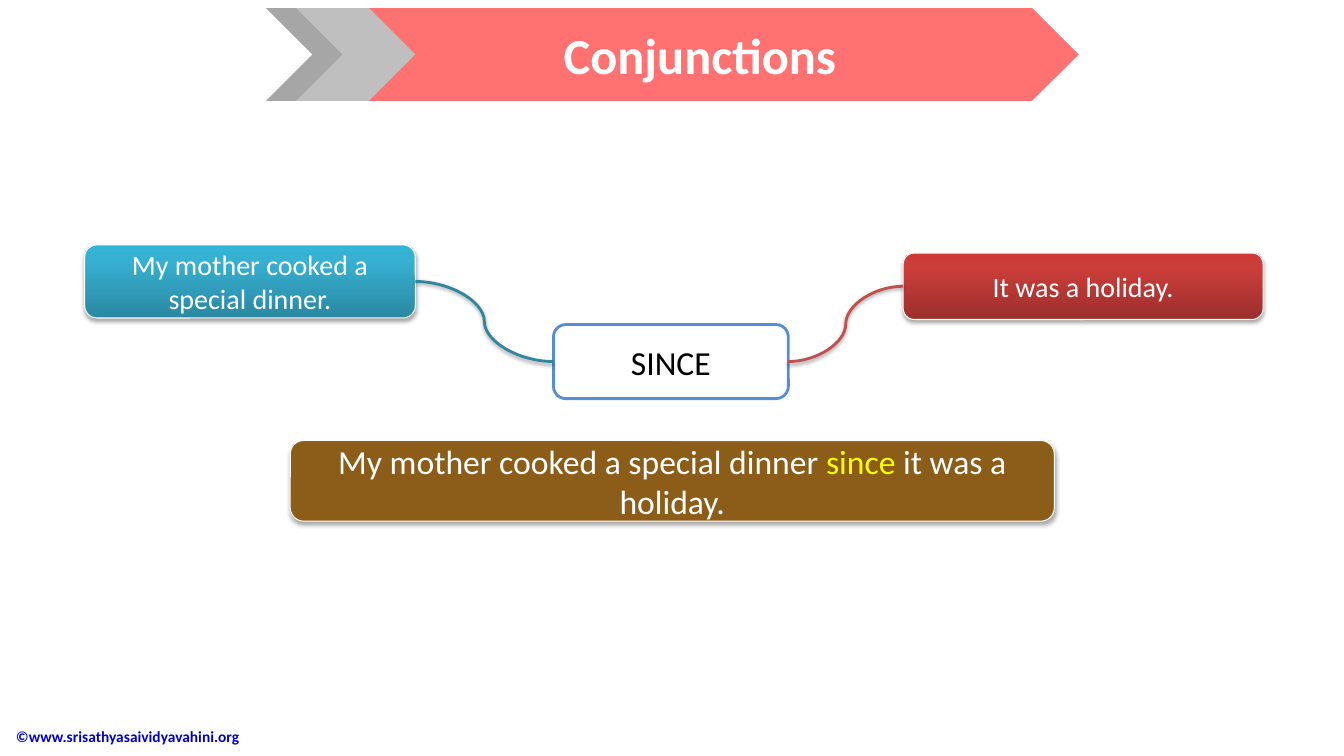
import copy
import pptx
import pptx.dml.color
import pptx.enum.dml
import pptx.enum.shapes
import pptx.enum.text
import pptx.oxml
import pptx.oxml.ns
import pptx.util

SHAPES = pptx.enum.shapes.MSO_SHAPE
ALIGN = pptx.enum.text.PP_ALIGN
WHITE = "FFFFFF"
TEAL_FADE = ("2A88A2", "37B1D2", "34B4D6")
RED_FADE = ("9C2F2D", "CB3E3A", "CE3B37")
LEFT_SIDE, RIGHT_SIDE = 1, 3

deck = pptx.Presentation()
deck.slide_width = pptx.util.Inches(13.33)
deck.slide_height = pptx.util.Inches(7.5)
COLUMN = deck.slide_width / 100
ROW = deck.slide_height / 100


def emu(box):
    left, top, width, height = box
    return [round(left * COLUMN), round(top * ROW), round(width * COLUMN), round(height * ROW)]


def color(value):
    return pptx.dml.color.RGBColor.from_string(value)


def write(holder, text, size=20, ink=WHITE, bold=False, align=ALIGN.CENTER, accent=None, accent_ink=None):
    frame = holder.text_frame
    frame.word_wrap = True
    frame.auto_size = pptx.enum.text.MSO_AUTO_SIZE.NONE
    frame.vertical_anchor = pptx.enum.text.MSO_ANCHOR.MIDDLE
    paragraph = frame.paragraphs[0]
    paragraph.alignment = align
    before, match, after = text.partition(accent) if accent else (text, "", "")
    for part, part_ink in ((before, ink), (match, accent_ink), (after, ink)):
        if part:
            run = paragraph.add_run()
            run.text = part
            run.font.name = "Calibri"
            run.font.size = pptx.util.Pt(size)
            run.font.bold = bold
            run.font.color.rgb = color(part_ink)


def cast_shadow(part, distance, opacity):
    properties = part._element.spPr
    effects = properties.find(pptx.oxml.ns.qn("a:effectLst"))
    if effects is None:
        effects = pptx.oxml.parse_xml(f'<a:effectLst {pptx.oxml.ns.nsdecls("a")}/>')
        properties.append(effects)
    effects.append(pptx.oxml.parse_xml(
        f'<a:outerShdw {pptx.oxml.ns.nsdecls("a")} blurRad="{pptx.util.Pt(3.1)}" '
        f'dist="{pptx.util.Pt(distance)}" dir="5400000" rotWithShape="0">'
        f'<a:srgbClr val="000000"><a:alpha val="{opacity * 1000}"/></a:srgbClr></a:outerShdw>'))


def add_panel(slide, kind, box, fill, border=None, border_width=0.75):
    panel = slide.shapes.add_shape(kind, *emu(box))
    panel.shadow.inherit = False
    if isinstance(fill, str):
        panel.fill.solid()
        panel.fill.fore_color.rgb = color(fill)
    else:
        panel.fill.gradient()
        stop_list = panel._element.spPr.find(".//" + pptx.oxml.ns.qn("a:gsLst"))
        stop_list.append(copy.deepcopy(stop_list[0]))
        for stop, shade, position in zip(panel.fill.gradient_stops, fill, (0, 0.8, 1)):
            stop.color.rgb = color(shade)
            stop.position = position
        panel.fill.gradient_angle = 90
    if border:
        panel.line.color.rgb = color(border)
        panel.line.width = pptx.util.Pt(border_width)
    else:
        panel.line.fill.background()
    return panel


def add_sentence(slide, box, text, fill, **text_format):
    sentence = add_panel(slide, SHAPES.ROUNDED_RECTANGLE, box, fill, WHITE)
    cast_shadow(sentence, 1.8, 35)
    write(sentence, text, **text_format)
    return sentence


def join(slide, start, start_side, end, end_side, ink):
    link = slide.shapes.add_connector(pptx.enum.shapes.MSO_CONNECTOR.CURVE, 0, 0, 0, 0)
    link.begin_connect(start, start_side)
    link.end_connect(end, end_side)
    link.line.color.rgb = color(ink)
    link.line.width = pptx.util.Pt(2)
    cast_shadow(link, 1.6, 38)


def add_banner(slide, box):
    left, top, width, height = box
    chevron_width = 8.85
    ribbon_left = left + 6.68
    ribbon_width = left + width - ribbon_left
    add_panel(slide, SHAPES.CHEVRON, (left, top, chevron_width, height), "A6A6A6")
    add_panel(slide, SHAPES.PENTAGON, (ribbon_left, top, ribbon_width, height), "FF7271")
    add_panel(slide, SHAPES.CHEVRON, (left + 2.25, top, chevron_width, height), "BFBFBF")
    title = slide.shapes.title
    title.left, title.top, title.width, title.height = emu((ribbon_left, top, ribbon_width - 1.72, height))
    write(title, "Conjunctions ", size=36, bold=True)
    slide.shapes._spTree.append(title._element)


def add_sentence_map(slide, box):
    left, top, width, height = box
    main_clause = add_sentence(slide, (left, top, 24.6, 9.67),
                               "My mother cooked a special dinner.", TEAL_FADE)
    reason_width = 26.78
    reason = add_sentence(slide, (left + width - reason_width, top + 1.07, reason_width, 8.8),
                          "It was a holiday.", RED_FADE)
    conjunction = add_panel(slide, SHAPES.ROUNDED_RECTANGLE,
                            (left + 34.88, top + 10.53, 17.48, 9.8), WHITE, "558ED5", 2)
    write(conjunction, "SINCE", size=24, ink="000000")
    join(slide, main_clause, RIGHT_SIDE, conjunction, LEFT_SIDE, "31859C")
    join(slide, conjunction, RIGHT_SIDE, reason, LEFT_SIDE, "C0504D")
    result_height = 10.67
    add_sentence(slide, (left + 15.3, top + height - result_height, 56.85, result_height),
                 "My mother cooked a special dinner since it was a holiday.", "8C5D18",
                 size=24, accent="since", accent_ink="FFFF00")


def add_footer(slide, box):
    footer = slide.shapes.add_textbox(*emu(box))
    write(footer, "©www.srisathyasaividyavahini.org", size=11, ink="0000CC", bold=True, align=ALIGN.LEFT)


def main():
    slide = deck.slides.add_slide(deck.slide_layouts[5])
    add_footer(slide, (0.45, 94.67, 26, 5.33))
    add_sentence_map(slide, (6.3, 32.4, 87.68, 36.54))
    add_banner(slide, (19.8, 1.07, 60.45, 12.27))
    deck.save("out.pptx")


if __name__ == "__main__":
    main()
